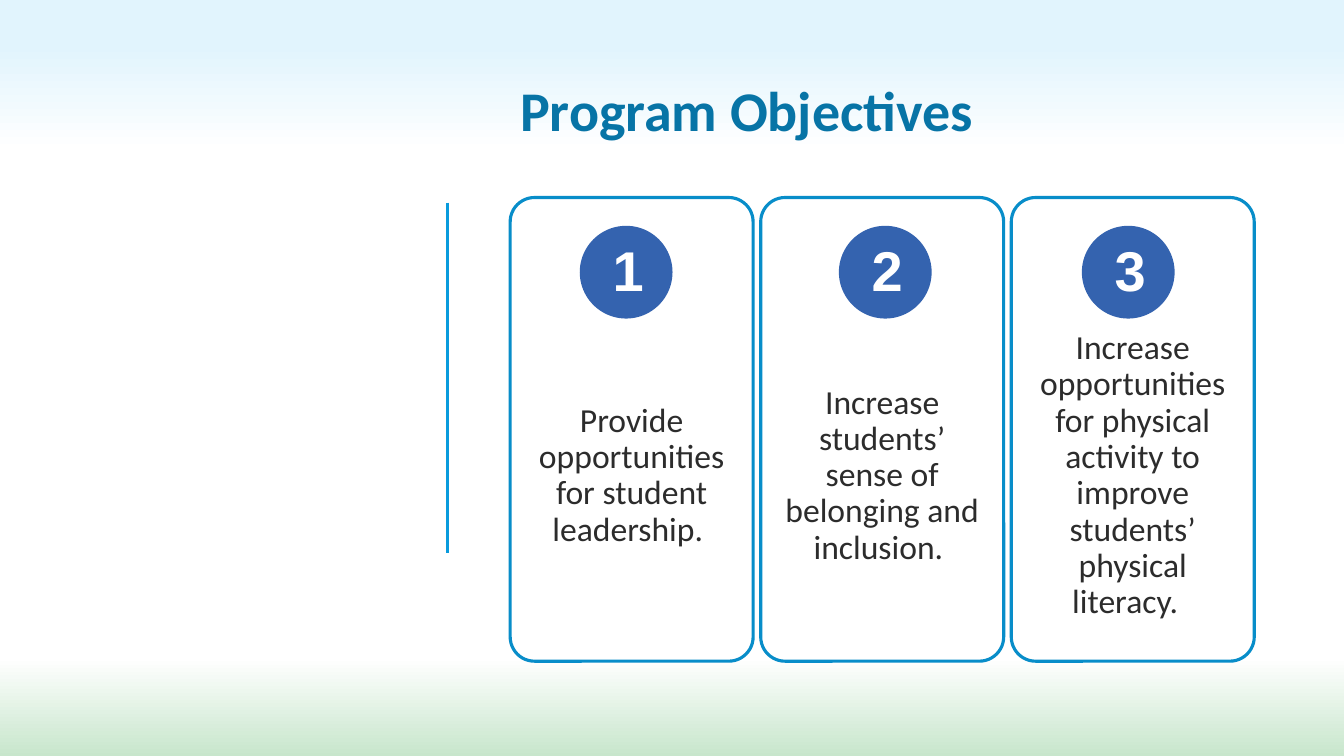
from copy import deepcopy
from pptx import Presentation
from pptx.dml.color import RGBColor
from pptx.enum.shapes import MSO_CONNECTOR, MSO_SHAPE
from pptx.enum.text import MSO_ANCHOR, MSO_AUTO_SIZE, PP_ALIGN
from pptx.oxml.ns import qn
from pptx.util import Inches, Pt
from lxml.etree import SubElement

# Content
TITLE = "Program Objectives"
GOALS = [  # left edge of the circle, goal
    (5.75, "Provide opportunities for student leadership. "),
    (8.32, "Increase students’ sense of belonging and inclusion. "),
    (10.73, "Increase opportunities for physical activity to improve "
            "students’ physical literacy.  "),
]
STOPS = [(0.06, "E1F4FD"), (0.2, "FFFFFF"), (0.87, "FFFFFF"), (1, "C8E6CC")]

# Layout
LEFT, TOP, WIDE, HIGH, STEP = 5.06, 1.96, 2.41, 4.6, 2.485
DISC = 0.92


def color(code):
    return RGBColor.from_string(code)


def write(shape, text, size, face, code, bold=False, align=PP_ALIGN.CENTER, space=None):
    frame = shape.text_frame
    frame.word_wrap = True
    para = frame.paragraphs[0]
    para.alignment = align
    if space:
        para.line_spacing = space
    run = para.add_run()
    run.text = text
    font = run.font
    font.size, font.name, font.bold = Pt(size), face, bold
    font.color.rgb = color(code)
    return frame


def box(x, y, w, h):
    return slide.shapes.add_textbox(Inches(x), Inches(y), Inches(w), Inches(h))


def shape(kind, x, y, w, h):
    item = slide.shapes.add_shape(kind, Inches(x), Inches(y), Inches(w), Inches(h))
    item.shadow.inherit = False
    return item


deck = Presentation()
deck.slide_width, deck.slide_height = Inches(13.33), Inches(7.5)
slide = deck.slides.add_slide(deck.slide_layouts[6])

# Background gradient, top to bottom
fill = slide.background.fill
fill.gradient()
fill.gradient_angle = 270
stops = next(slide.element.iter(qn("a:gsLst")))
while len(stops) < len(STOPS):
    stops.append(deepcopy(stops[0]))
for stop, (place, code) in zip(fill.gradient_stops, STOPS):
    stop.position = place
    stop.color.rgb = color(code)

# Side rule
rule = slide.shapes.add_connector(
    MSO_CONNECTOR.STRAIGHT, Inches(4.44), Inches(2.01), Inches(4.44), Inches(5.49))
rule.line.color.rgb = color("099BDD")
rule.line.width = Pt(2)
SubElement(rule.element.spPr, qn("a:effectLst"))

# Title
frame = write(box(LEFT, 0.31, 7.39, 1.65), TITLE, 40, "Calibri", "0774A6",
              True, PP_ALIGN.LEFT, 0.85)
frame.vertical_anchor = MSO_ANCHOR.MIDDLE

# Numbered cards
for i, (x, goal) in enumerate(GOALS):
    disc = shape(MSO_SHAPE.OVAL, x, 2.24, DISC, DISC)
    disc.fill.solid()
    disc.fill.fore_color.rgb = color("3463AF")
    disc.line.fill.background()
    frame = write(box(x + 0.18, 2.29, 0.6, 0.77), str(i + 1), 40, "Arial", "FFFFFF", True)
    frame.auto_size = MSO_AUTO_SIZE.SHAPE_TO_FIT_TEXT

    card = shape(MSO_SHAPE.ROUNDED_RECTANGLE, LEFT + i * STEP, TOP, WIDE, HIGH)
    card.adjustments[0] = 0.1
    card.fill.background()
    card.line.color.rgb = color("088DC9")
    card.line.width = Pt(2.25)
    frame = write(card, goal, 24, "Calibri", "2C2C2C", space=0.9)
    frame.vertical_anchor = MSO_ANCHOR.MIDDLE
    frame.margin_left = frame.margin_right = Inches(0.12)
    frame.margin_top, frame.margin_bottom = Inches(1.96), Inches(1.04)

deck.save("out.pptx")
